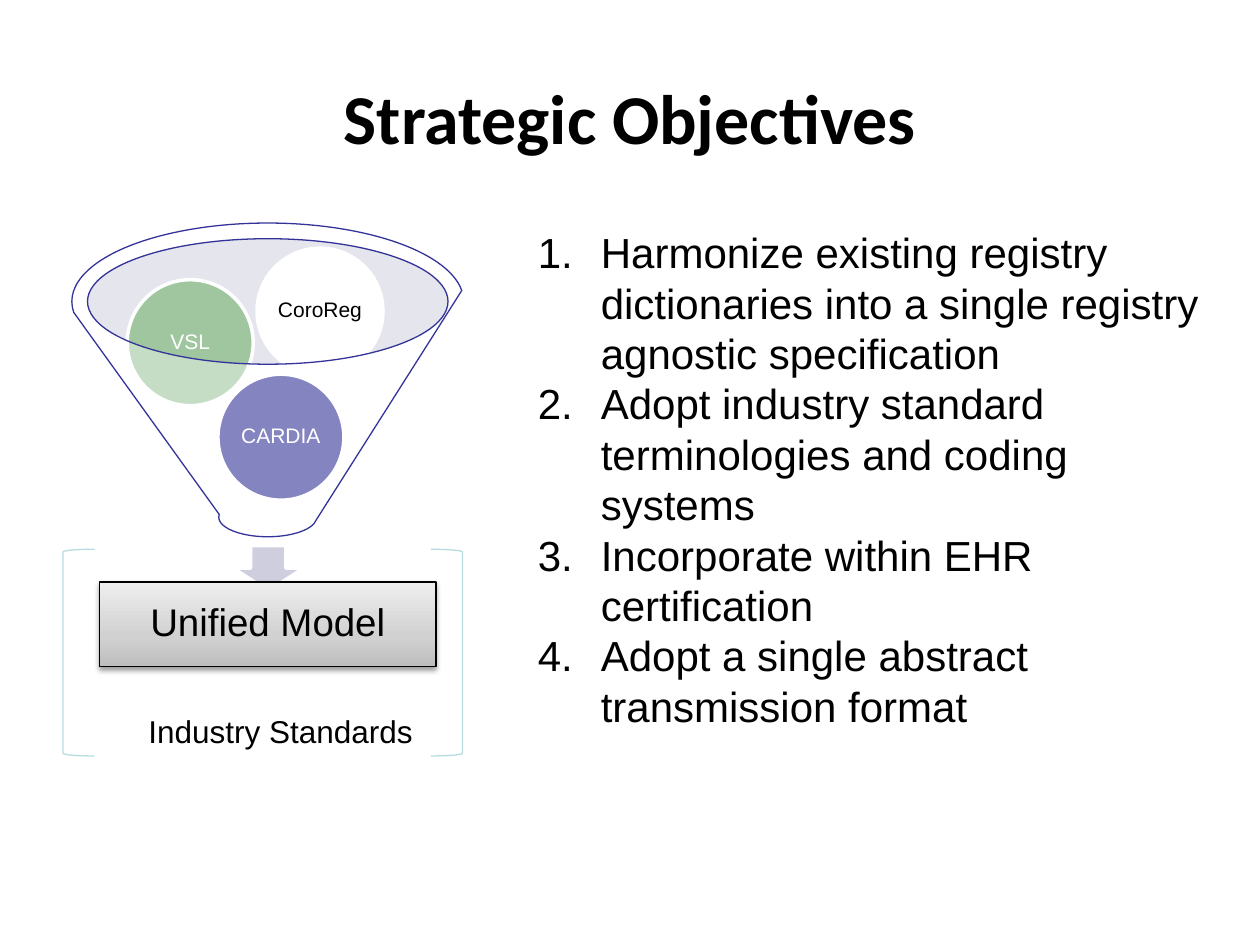
"""Build the Strategic Objectives slide with a funnel diagram and a numbered list."""
from copy import deepcopy

from lxml import etree
from pptx import Presentation
from pptx.dml.color import RGBColor
from pptx.enum.shapes import MSO_SHAPE
from pptx.enum.text import MSO_ANCHOR, PP_ALIGN
from pptx.oxml.ns import qn
from pptx.util import Inches, Pt

ELLIPSE, RECTANGLE = MSO_SHAPE.OVAL, MSO_SHAPE.RECTANGLE
ARROW, FUNNEL = MSO_SHAPE.DOWN_ARROW, MSO_SHAPE.FUNNEL
LEFT_BRACKET, RIGHT_BRACKET = MSO_SHAPE.LEFT_BRACKET, MSO_SHAPE.RIGHT_BRACKET
CENTER, LEFT = PP_ALIGN.CENTER, PP_ALIGN.LEFT
MIDDLE, TOP = MSO_ANCHOR.MIDDLE, MSO_ANCHOR.TOP
color = RGBColor.from_string


def add_shape(kind, box, fill=None, line=None, width=0.75, opacity=None):
    shape = slide.shapes.add_shape(kind, *map(Inches, box))
    shape.shadow.inherit = False
    if fill:
        shape.fill.solid()
        shape.fill.fore_color.rgb = color(fill)
    else:
        shape.fill.background()
    if opacity:
        fill_color = shape._element.spPr.find(qn("a:solidFill"))[0]
        etree.SubElement(fill_color, qn("a:alpha"), val=str(opacity * 1000))
    if line:
        shape.line.color.rgb = color(line)
        shape.line.width = Pt(width)
    else:
        shape.line.fill.background()
    return shape


def write(shape, lines, size, text_color="000000", name="Arial", bold=False,
          align=CENTER, anchor=MIDDLE, spacing=None, inset=None, numbered=False, wrap=True):
    frame = shape.text_frame
    frame.text = "\n".join(lines)
    frame_format = {"word_wrap": wrap, "vertical_anchor": anchor}
    if inset is not None:
        for side in ("left", "right", "top", "bottom"):
            frame_format[f"margin_{side}"] = Inches(inset)
    for attribute, value in frame_format.items():
        setattr(frame, attribute, value)
    for paragraph in frame.paragraphs:
        paragraph.alignment = align
        if spacing:
            paragraph.line_spacing = spacing
        if numbered:
            properties = paragraph._p.get_or_add_pPr()
            properties.set("marL", str(Inches(0.5)))
            properties.set("indent", str(Inches(-0.5)))
            etree.SubElement(properties, qn("a:buFont"), typeface="+mj-lt")
            etree.SubElement(properties, qn("a:buAutoNum"), type="arabicPeriod")
        font = paragraph.runs[0].font
        for attribute, value in {"size": Pt(size), "name": name, "bold": bold}.items():
            setattr(font, attribute, value)
        font.color.rgb = color(text_color)


presentation = Presentation()
presentation.slide_width, presentation.slide_height = Inches(10), Inches(7.5)
slide = presentation.slides.add_slide(presentation.slide_layouts[5])

title = slide.shapes.title
title_box = {"left": 0.5, "top": 0.3, "width": 9, "height": 1.25}
for attribute, value in title_box.items():
    setattr(title, attribute, Inches(value))
write(title, ["Strategic Objectives"], 40, name="Calibri", bold=True)

add_shape(ELLIPSE, (0.69, 1.89, 2.87, 1), "BFBFD4", opacity=40)
add_shape(ARROW, (1.85, 4.33, 0.56, 0.36), "CECEDE", "FFFFFF", 2)

model = add_shape(RECTANGLE, (0.79, 4.62, 2.67, 0.67), line="000000")
model.fill.gradient()
model.fill.gradient_angle = 90
stop_list = model._element.spPr.find(qn("a:gradFill")).find(qn("a:gsLst"))
stop_list.append(deepcopy(stop_list[-1]))
gradient = [(0, "BDBDBD"), (0.35, "D1D1D1"), (1, "EEEEEE")]
for stop, (position, stop_color) in zip(model.fill.gradient_stops, gradient):
    stop.position = position
    stop.color.rgb = color(stop_color)
effects = model._element.spPr.find(qn("a:effectLst"))
shadow = etree.SubElement(effects, qn("a:outerShdw"), blurRad=str(Pt(3.1)),
                          dist=str(Pt(1.6)), dir="5400000", rotWithShape="0")
shadow_color = etree.SubElement(shadow, qn("a:srgbClr"), val="000000")
etree.SubElement(shadow_color, qn("a:alpha"), val="38000")
write(model, ["Unified Model"], 22, spacing=0.9, inset=0.17)

registries = [
    ("CARDIA", 1.73, 2.97, "333399", "FFFFFF"),
    ("VSL", 1.01, 2.22, "9FC69F", "FFFFFF"),
    ("CoroReg", 2.04, 1.97, "FFFFFF", "000000"),
]
for label, left, top, fill, text_color in registries:
    circle = add_shape(ELLIPSE, (left, top, 1, 1), fill, "FFFFFF", 2)
    write(circle, [label], 12, text_color, spacing=0.9, inset=0.02)

add_shape(FUNNEL, (0.57, 1.77, 3.11, 2.49), "FFFFFF", "333399", opacity=40)

objectives = [
    "Harmonize existing registry dictionaries into a single registry agnostic specification",
    "Adopt industry standard terminologies and coding systems",
    "Incorporate within EHR certification",
    "Adopt a single abstract transmission format",
]
objective_box = slide.shapes.add_textbox(*map(Inches, (4.17, 1.75, 5.58, 5.5)))
write(objective_box, objectives, 24, align=LEFT, anchor=TOP, numbered=True)

for kind, left in ((LEFT_BRACKET, 0.5), (RIGHT_BRACKET, 3.42)):
    add_shape(kind, (left, 4.36, 0.25, 1.64), line="B6DCDF")

standards = slide.shapes.add_textbox(*map(Inches, (1.08, 5.6, 2.32, 0.4)))
write(standards, ["Industry Standards"], 18, align=LEFT, anchor=TOP, wrap=False)

presentation.save("out.pptx")
